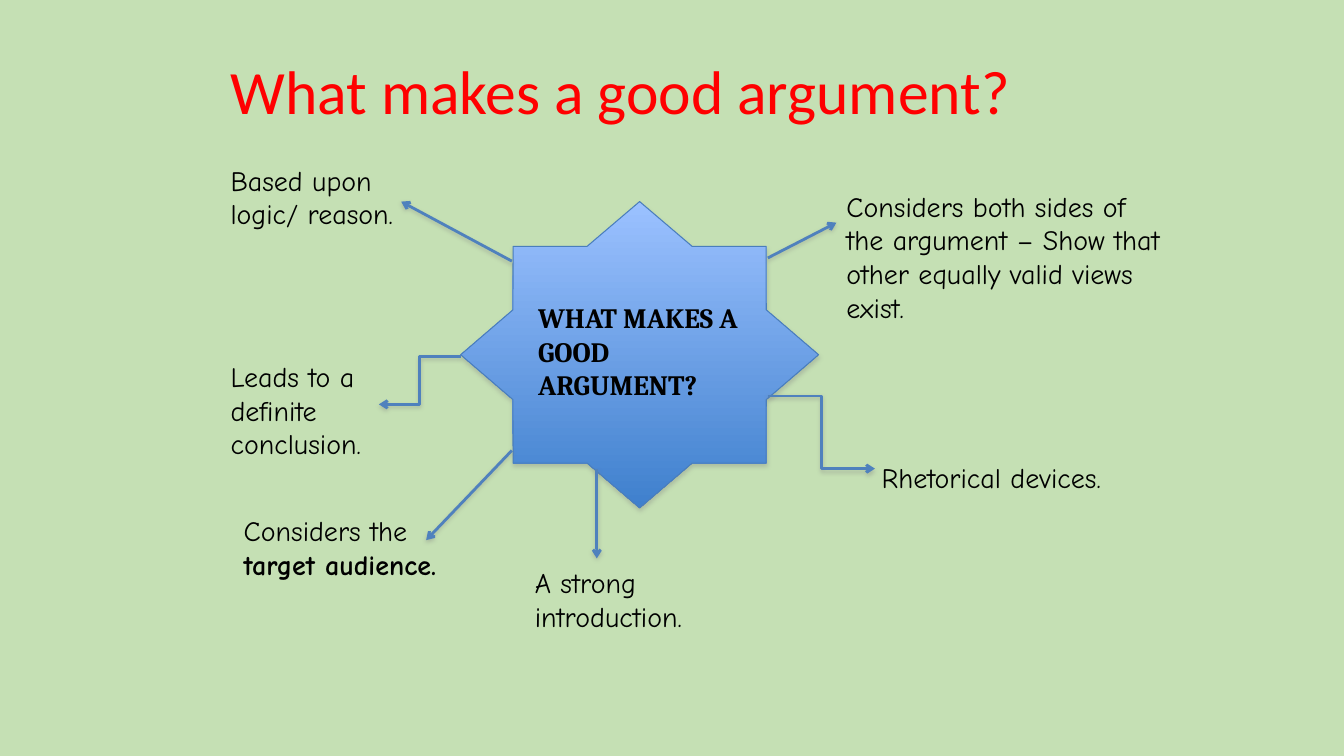
"""Builds a slide that maps the parts of a good argument around a star."""
from lxml.etree import SubElement as Sub
from pptx import Presentation
from pptx.dml.color import RGBColor as Rgb
from pptx.enum.shapes import MSO_CONNECTOR as Link, MSO_SHAPE as Form
from pptx.enum.text import MSO_ANCHOR as Anchor
from pptx.oxml.ns import qn
from pptx.util import Cm, Pt

HUES = {
    "back": "C5E0B4", "title": "FF0000", "text": "000000", "arrow": "4F81BD",
    "edge": "4A7EBB", "top": "9BC1FF", "base": "3F80CD", "shade": "808080",
}
NOTES = [
    ((21.08, 4.52, 8.61, 3.18),
     "Considers both sides of the argument – Show that other equally valid views exist.", ""),
    ((5.56, 3.86, 5.59, 2.29), "Based upon logic/ reason.", ""),
    ((5.56, 8.81, 6.02, 2.74), "Leads to a definite conclusion.", ""),
    ((5.89, 12.7, 5.59, 3.18), "Considers the ", "target audience."),
    ((13.23, 14, 5.59, 3.18), "A strong introduction.", ""),
    ((21.97, 11.35, 6.45, 3.63), "Rhetorical devices.", ""),
]
ARROWS = [
    (Link.STRAIGHT, (19.35, 6.5, 21.08, 5.61)),
    (Link.ELBOW, (11.61, 8.99, 9.55, 10.19)),
    (Link.STRAIGHT, (12.9, 6.58, 10.11, 5.08)),
    (Link.STRAIGHT, (15.04, 11.81, 15.04, 14.07)),
    (Link.STRAIGHT, (12.9, 11.35, 10.74, 13.61)),
    (Link.ELBOW, (19.35, 9.98, 22.05, 11.81)),
]


class Board:
    """Holds the style and the current slide."""

    def __init__(self, deck):
        self.slide = deck.slides.add_slide(deck.slide_layouts[6])
        self.items = self.slide.shapes
        fill = self.slide.background.fill
        fill.solid()
        fill.fore_color.rgb = self.hue("back")

    def hue(self, name):
        return Rgb.from_string(HUES[name])

    def shade(self, props, dist, alpha):
        """Give the shape properties a soft shadow below."""
        list_ = props.find(qn("a:effectLst"))
        if list_ is None:
            list_ = Sub(props, qn("a:effectLst"))
        cast = Sub(list_, qn("a:outerShdw"), blurRad=str(Pt(3.1)),
                   dist=str(Pt(dist)), dir="5400000", rotWithShape="0")
        tint = Sub(cast, qn("a:srgbClr"), val=HUES["shade"])
        Sub(tint, qn("a:alpha"), val=str(alpha * 1000))

    def text(self, box, words, strong="", font="Comic Neue", size=20,
             hue="text", bold=False, pad=0.25):
        """Add a text box, with an optional bold ending."""
        frame = self.items.add_textbox(*map(Cm, box)).text_frame
        frame.word_wrap = True
        frame.margin_left = frame.margin_right = Cm(0.25)
        frame.margin_top = frame.margin_bottom = Cm(pad)
        para = frame.paragraphs[0]
        para.text = words
        if strong:
            para.add_run().text = strong
        for run in para.runs:
            run.font.name = font
            run.font.size = Pt(size)
            run.font.color.rgb = self.hue(hue)
            run.font.bold = bold or run.text == strong
        return frame

    def title(self, box, words):
        """Add the heading, centred in height."""
        frame = self.text(box, words, font="Calibri", size=44, hue="title", pad=0.13)
        frame.vertical_anchor = Anchor.MIDDLE
        frame.paragraphs[0].line_spacing = 0.9

    def star(self, box):
        """Add the shaded star."""
        star = self.items.add_shape(Form.STAR_8_POINT, *map(Cm, box))
        star.adjustments[0] = 0.383
        star.fill.gradient()
        star.fill.gradient_angle = 270
        for stop, name, place in zip(star.fill.gradient_stops, ("top", "base"), (0, 1)):
            stop.color.rgb = self.hue(name)
            stop.position = place
        star.line.color.rgb = self.hue("edge")
        star.line.width = Pt(0.75)
        star.shadow.inherit = False
        self.shade(star.element.spPr, 1.8, 35)

    def arrow(self, kind, ends):
        """Add a straight or bent arrow."""
        line = self.items.add_connector(kind, *map(Cm, ends))
        line.line.color.rgb = self.hue("arrow")
        line.line.width = Pt(2)
        props = line.element.spPr
        Sub(props.find(qn("a:ln")), qn("a:tailEnd"), type="arrow")
        self.shade(props, 1.6, 38)


def main():
    deck = Presentation()
    deck.slide_width, deck.slide_height = Cm(33.87), Cm(19.05)
    board = Board(deck)
    board.title((5.56, 0.36, 22.86, 4.04), "What makes a good argument?")
    board.star((11.61, 5.08, 9.02, 7.72))
    board.text((13.31, 7.32, 6.02, 2.29), "WHAT MAKES A GOOD ARGUMENT?",
               font="Cambria", bold=True)
    for note in NOTES:
        board.text(*note)
    for arrow in ARROWS:
        board.arrow(*arrow)
    deck.save("out.pptx")


if __name__ == "__main__":
    main()
